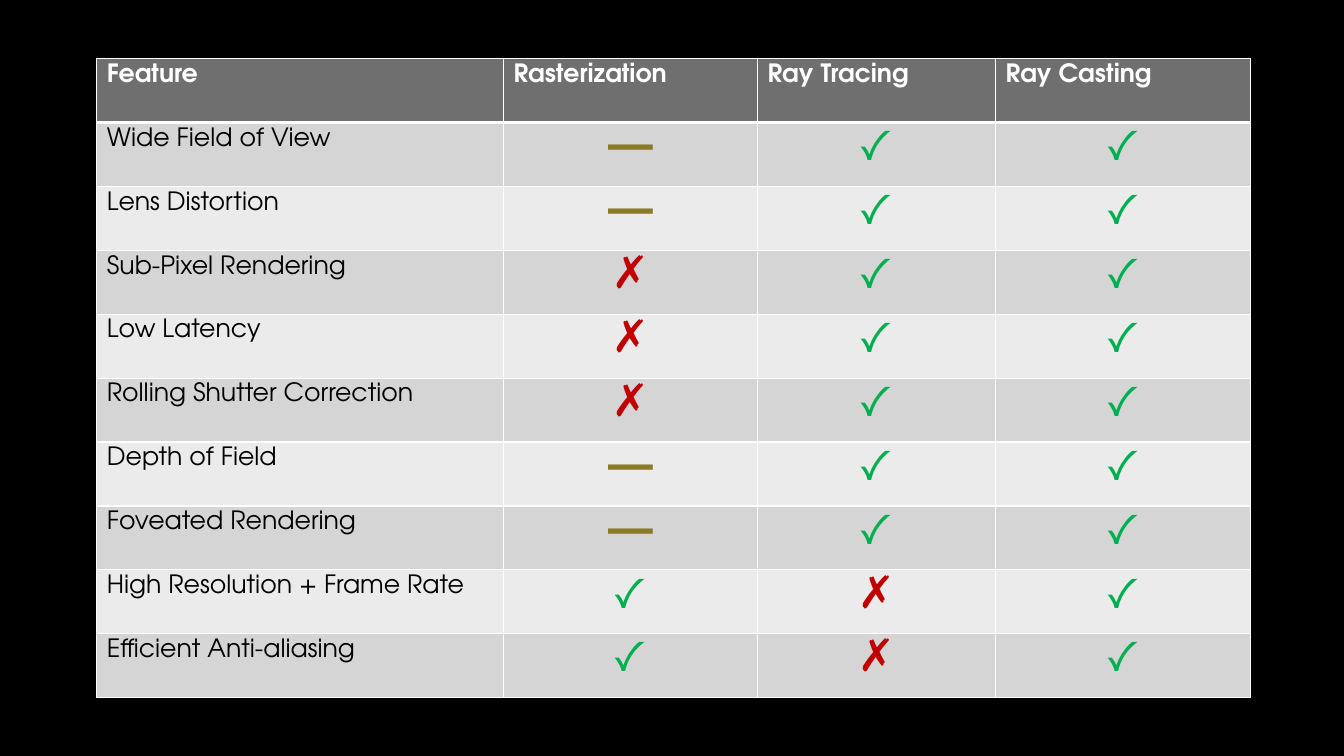
import dataclasses

import pptx
import pptx.dml.color
import pptx.enum.text
import pptx.oxml
import pptx.oxml.ns
import pptx.util
from pptx.util import Cm


@dataclasses.dataclass(frozen=True)
class Theme:
    font: str = "TeX Gyre Adventor"
    background: str = "000000"
    header: str = "6F6F6F"
    bands: tuple = ("D5D5D5", "EBEBEB")
    rule: str = "FFFFFF"
    header_text: str = "FFFFFF"
    body_text: str = "000000"
    text_size: int = 18
    mark_size: int = 32
    thin: int = 1
    thick: int = 3


THEME = Theme()
MARK_COLORS = {"✓": "00B050", "✗": "C00000", "—": "897C27"}
HEADINGS = ("Feature", "Rasterization", "Ray Tracing", "Ray Casting")
FEATURES = (
    ("Wide Field of View", "—", "✓", "✓"),
    ("Lens Distortion", "—", "✓", "✓"),
    ("Sub-Pixel Rendering", "✗", "✓", "✓"),
    ("Low Latency", "✗", "✓", "✓"),
    ("Rolling Shutter Correction", "✗", "✓", "✓"),
    ("Depth of Field", "—", "✓", "✓"),
    ("Foveated Rendering", "—", "✓", "✓"),
    ("High Resolution + Frame Rate", "✓", "✗", "✓"),
    ("Efficient Anti-aliasing", "✓", "✗", "✓"),
)
COLUMN_WIDTHS = (10.25, 6.4, 6.0, 6.42)
ROW_HEIGHT = 1.61


def write(cell, text, *, color, size=THEME.text_size, bold=False, centered=False):
    para = cell.text_frame.paragraphs[0]
    if centered:
        para.alignment = pptx.enum.text.PP_ALIGN.CENTER
    span = para.add_run()
    span.text = text
    span.font.name = THEME.font
    span.font.size = pptx.util.Pt(size)
    span.font.bold = bold
    span.font.color.rgb = pptx.dml.color.RGBColor.from_string(color)


def rule_cell(cell, top, bottom):
    """Draw the four cell borders, with top and bottom widths in points."""
    widths = {"lnL": THEME.thin, "lnR": THEME.thin, "lnT": top, "lnB": bottom}
    properties = cell._tc.get_or_add_tcPr()
    for position, (side, width) in enumerate(widths.items()):
        properties.insert(position, pptx.oxml.parse_xml(
            f'<a:{side} {pptx.oxml.ns.nsdecls("a")} w="{pptx.util.Pt(width)}">'
            f'<a:solidFill><a:srgbClr val="{THEME.rule}"/></a:solidFill></a:{side}>'))


# Slide
deck = pptx.Presentation()
deck.slide_width, deck.slide_height = Cm(33.87), Cm(19.05)
page = deck.slides.add_slide(deck.slide_layouts[6])
page.background.fill.solid()
page.background.fill.fore_color.rgb = pptx.dml.color.RGBColor.from_string(THEME.background)

# Table frame
rows = (HEADINGS, *FEATURES)
table = page.shapes.add_table(
    len(rows), len(HEADINGS), Cm(2.44), Cm(1.48),
    Cm(sum(COLUMN_WIDTHS)), Cm(ROW_HEIGHT * len(rows))).table
for column, width in zip(table.columns, COLUMN_WIDTHS):
    column.width = Cm(width)

# Header, feature names and marks
for row_index, values in enumerate(rows):
    table.rows[row_index].height = Cm(ROW_HEIGHT)
    is_header = row_index == 0
    fill = THEME.header if is_header else THEME.bands[(row_index - 1) % 2]
    for column_index, text in enumerate(values):
        cell = table.cell(row_index, column_index)
        cell.fill.solid()
        cell.fill.fore_color.rgb = pptx.dml.color.RGBColor.from_string(fill)
        rule_cell(cell,
                  top=THEME.thick if row_index == 1 else THEME.thin,
                  bottom=THEME.thick if is_header else THEME.thin)
        if is_header:
            write(cell, text, color=THEME.header_text, bold=True)
        elif column_index == 0:
            write(cell, text, color=THEME.body_text)
        else:
            write(cell, text, color=MARK_COLORS[text], size=THEME.mark_size,
                  bold=text == "—", centered=True)

deck.save("out.pptx")
